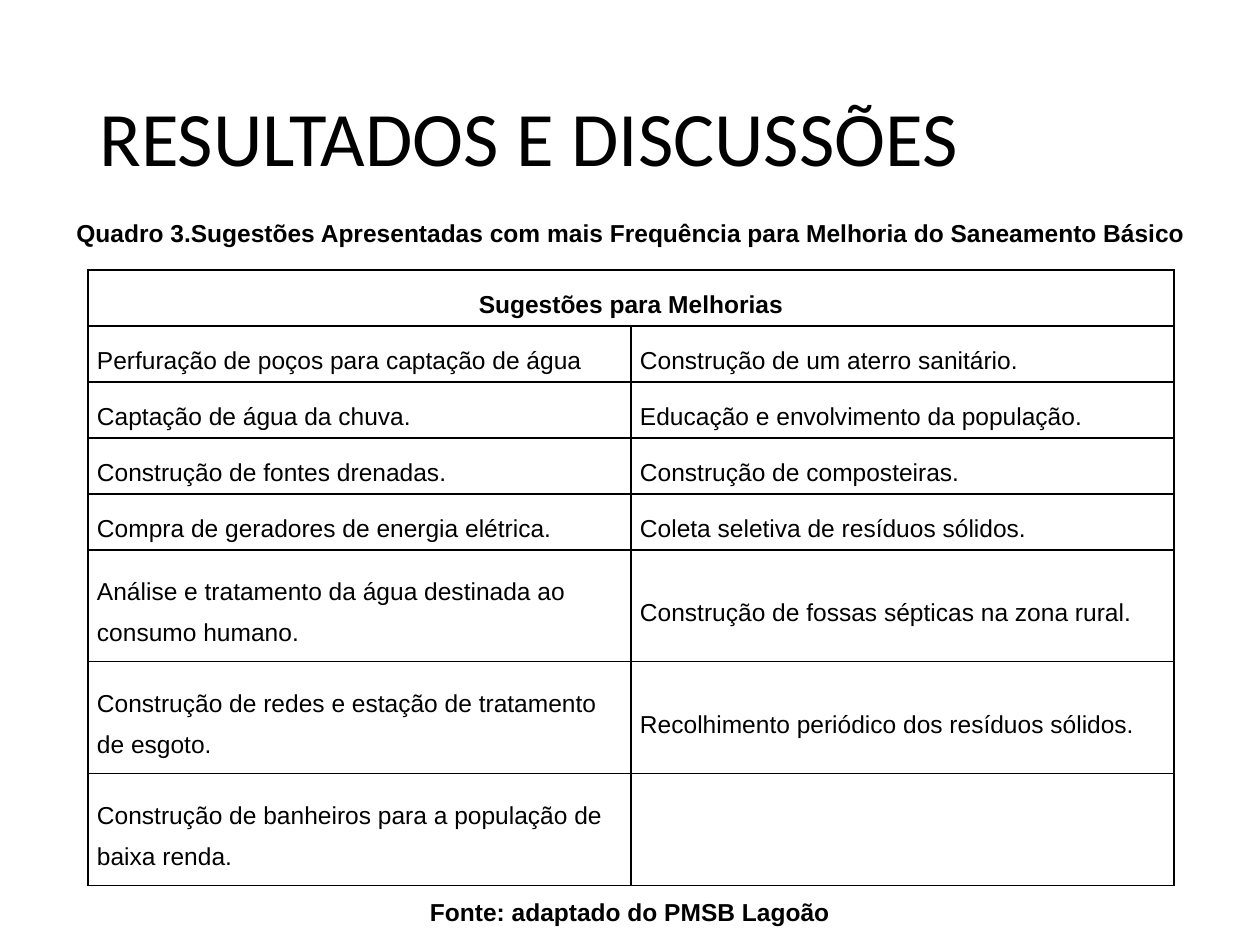
from dataclasses import dataclass

from lxml.etree import SubElement
from pptx import Presentation
from pptx.dml.color import RGBColor
from pptx.enum.text import MSO_ANCHOR, PP_ALIGN
from pptx.oxml.ns import qn
from pptx.util import Emu, Pt


@dataclass(frozen=True)
class Theme:
    ink: str = "000000"
    paper: str = "FFFFFF"
    heading_font: str = "Calibri"
    body_font: str = "Arial"
    heading_size: int = 44
    body_size: int = 14
    border: int = 1


THEME = Theme()
EMU_PER_PX = 914400 / 126

HEADER = "Sugestões para Melhorias"
SUGGESTIONS = [
    ("Perfuração de poços para captação de água", "Construção de um aterro sanitário."),
    ("Captação de água da chuva.", "Educação e envolvimento da população."),
    ("Construção de fontes drenadas.", "Construção de composteiras."),
    ("Compra de geradores de energia elétrica.", "Coleta seletiva de resíduos sólidos."),
    ("Análise e tratamento da água destinada ao consumo humano.",
     "Construção de fossas sépticas na zona rural."),
    ("Construção de redes e estação de tratamento de esgoto.",
     "Recolhimento periódico dos resíduos sólidos."),
    ("Construção de banheiros para a população de baixa renda.", ""),
]
LINE_HEIGHT = 56
ROW_LINES = [1] * 5 + [2] * 3


def px(length):
    return Emu(round(length * EMU_PER_PX))


def write(paragraph, wording, size=THEME.body_size, font=THEME.body_font,
          bold=False, align=PP_ALIGN.LEFT, spacing=1.0):
    paragraph.alignment = align
    paragraph.line_spacing = spacing
    run = paragraph.add_run()
    run.text = wording
    run.font.size = Pt(size)
    run.font.name = font
    run.font.bold = bold
    run.font.color.rgb = RGBColor.from_string(THEME.ink)


def add_text(slide, box, wording, anchor=MSO_ANCHOR.TOP, wrap=True, **style):
    frame = slide.shapes.add_textbox(*map(px, box)).text_frame
    frame.word_wrap = wrap
    frame.vertical_anchor = anchor
    write(frame.paragraphs[0], wording, **style)
    return frame.paragraphs[0]


def add_heading(slide, box):
    add_text(slide, box, "RESULTADOS E DISCUSSÕES", MSO_ANCHOR.MIDDLE,
             size=THEME.heading_size, font=THEME.heading_font, spacing=0.9)


def add_caption(slide, box):
    caption = add_text(
        slide, box,
        "Quadro 3.Sugestões Apresentadas com mais Frequência para Melhoria do Saneamento Básico",
        bold=True, align=PP_ALIGN.CENTER, spacing=1.15)
    caption.space_after = Pt(10)


def add_credit(slide, box):
    add_text(slide, box, "Fonte: adaptado do PMSB Lagoão", MSO_ANCHOR.MIDDLE,
             wrap=False, bold=True, align=PP_ALIGN.CENTER)


def style_cell(cell):
    cell.vertical_anchor = MSO_ANCHOR.MIDDLE
    cell.margin_left = cell.margin_right = px(9)
    cell.margin_top = cell.margin_bottom = 0
    properties = cell._tc.get_or_add_tcPr()
    for edge in ("a:lnL", "a:lnR", "a:lnT", "a:lnB"):
        line = SubElement(properties, qn(edge), w=str(Pt(THEME.border)))
        SubElement(SubElement(line, qn("a:solidFill")), qn("a:srgbClr"), val=THEME.ink)
    cell.fill.solid()
    cell.fill.fore_color.rgb = RGBColor.from_string(THEME.paper)


def add_suggestions(slide, box):
    table = slide.shapes.add_table(len(ROW_LINES), 2, *map(px, box)).table
    for column in table.columns:
        column.width = px(box[2] // 2)
    for row, lines in zip(table.rows, ROW_LINES):
        row.height = px(lines * LINE_HEIGHT)
    for cell in table.iter_cells():
        style_cell(cell)

    header = table.cell(0, 0)
    header.merge(table.cell(0, 1))
    write(header.text_frame.paragraphs[0], HEADER, bold=True,
          align=PP_ALIGN.CENTER, spacing=1.5)
    for row, pair in enumerate(SUGGESTIONS, start=1):
        for column, suggestion in enumerate(pair):
            if suggestion:
                paragraph = table.cell(row, column).text_frame.paragraphs[0]
                write(paragraph, suggestion, spacing=1.5)


def main():
    presentation = Presentation()
    presentation.slide_width = px(1260)
    presentation.slide_height = px(945)
    slide = presentation.slides.add_slide(presentation.slide_layouts[6])
    add_heading(slide, (87, 50, 1086, 183))
    add_suggestions(slide, (88, 270, 1086, sum(ROW_LINES) * LINE_HEIGHT))
    add_caption(slide, (1, 207, 1260, 44))
    add_credit(slide, (417, 890, 426, 43))
    presentation.save("out.pptx")


if __name__ == "__main__":
    main()
